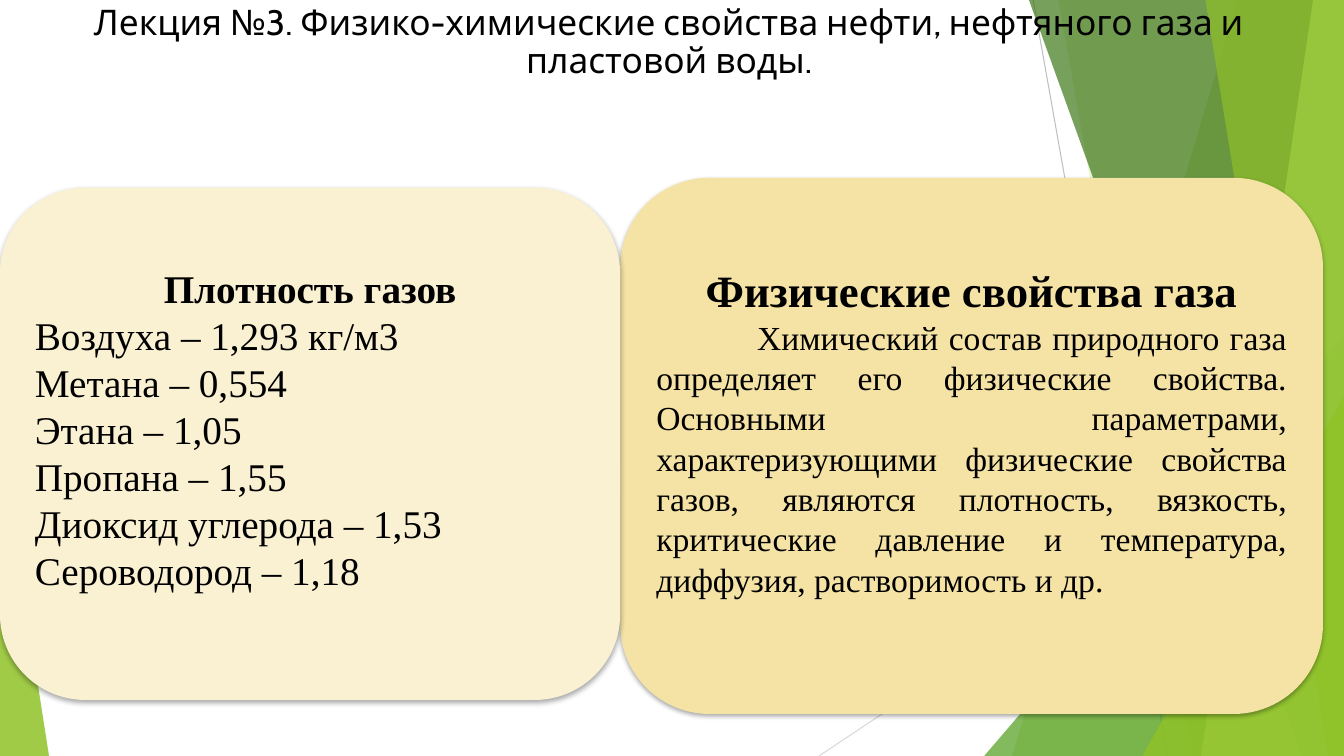
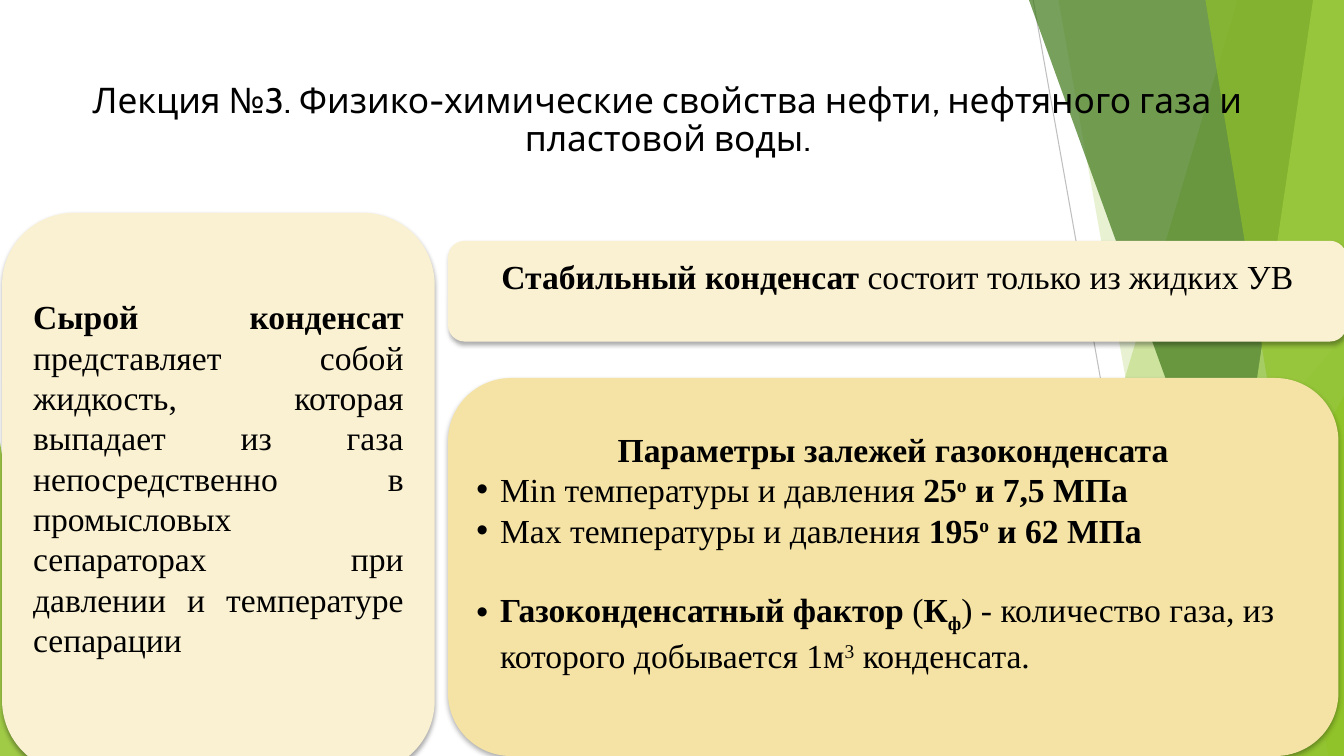
from lxml import etree
from pptx import Presentation
from pptx.dml.color import RGBColor
from pptx.enum.shapes import MSO_CONNECTOR, MSO_SHAPE
from pptx.enum.text import MSO_ANCHOR, MSO_AUTO_SIZE, PP_ALIGN
from pptx.oxml.ns import qn
from pptx.util import Pt

LINE, TRI, ROUND = (MSO_CONNECTOR.STRAIGHT, MSO_SHAPE.ISOSCELES_TRIANGLE,
                    MSO_SHAPE.ROUNDED_RECTANGLE)
TOP, MID = MSO_ANCHOR.TOP, MSO_ANCHOR.MIDDLE
LEFT, MIDDLE, FULL = PP_ALIGN.LEFT, PP_ALIGN.CENTER, PP_ALIGN.JUSTIFY

WIDE, HIGH = 960, 540
HEAD, BODY = "Cabin", "Times New Roman"
BLACK, CREAM, SAND = "000000", "FAF1D2", "F5E3A5"
LIME, GREEN, DARK, PALE = "90C226", "54A021", "3F7819", "C0E474"
TITLE = ("Лекция №3. Физико-химические свойства нефти, "
         "нефтяного газа и пластовой воды.")

# Edges: (start, end, colour)
RAYS = [((738, 0), (834, HIGH), "BFBFBF"), ((WIDE, 290), (585, HIGH), "D9D9D9")]
# Bands up to the right edge: (top x, bottom x, colour, opacity)
BACK = [(884, 723, LIME, 30), (756, 852, LIME, 20)]
FRONT = [(735, 930, DARK, 70), (938, 858, PALE, 70), (861, 949, LIME, 65)]
# Corners standing on the bottom edge: (left, top, width, tip, colour, opacity)
LOW = (703, 240, 257, 1, GREEN, 72)
ENDS = [(816, 283, 144, 1, LIME, 80), (0, 316, 35, 0, LIME, 85)]


def hue(code):
    return RGBColor.from_string(code)


def sub(node, tag, **attrs):
    return etree.SubElement(node, qn(tag), attrs)


def paint(shape, code, alpha=100):
    shape.shadow.inherit = False
    shape.fill.solid()
    shape.fill.fore_color.rgb = hue(code)
    shape.line.fill.background()
    if alpha < 100:
        tint = shape.element.spPr.find(qn("a:solidFill"))[0]
        sub(tint, "a:alpha", val=str(alpha * 1000))


def write(para, text, font=BODY, size=24, bold=False, shift=0, code=BLACK):
    run = para.add_run()
    run.text = text
    run.font.name, run.font.size, run.font.bold = font, Pt(size), bold
    run.font.color.rgb = hue(code)
    if shift:
        run.font._element.set("baseline", str(shift * 1000))


# Shared backdrop, kept in the layout
def backdrop(slide, layout):
    group = slide.shapes.add_group_shape()
    parts = group.shapes

    def band(top, low, code, alpha):
        form = parts.build_freeform(Pt(top), 0)
        form.add_line_segments([(Pt(WIDE), 0), (Pt(WIDE), Pt(HIGH)),
                                (Pt(low), Pt(HIGH))], close=True)
        paint(form.convert_to_shape(), code, alpha)

    def corner(left, top, width, tip, code, alpha):
        shape = parts.add_shape(TRI, Pt(left), Pt(top), Pt(width), Pt(HIGH - top))
        shape.adjustments[0] = tip
        paint(shape, code, alpha)

    for start, end, code in RAYS:
        ray = parts.add_connector(LINE, *map(Pt, start + end))
        ray.line.color.rgb = hue(code)
        ray.line.width = Pt(0.75)
        sub(ray.element.spPr, "a:effectLst")
    for item in BACK:
        band(*item)
    corner(*LOW)
    for item in FRONT:
        band(*item)
    for item in ENDS:
        corner(*item)
    for num, node in enumerate(group.element.iter(qn("p:cNvPr")), 100):
        node.set("id", str(num))
    layout.shapes.element.append(group.element)


def heading(slide, left, top):
    title = slide.shapes.title
    title.left, title.top, title.width, title.height = map(Pt, (left, top, 850, 66))
    frame = title.text_frame
    frame.word_wrap, frame.auto_size = True, MSO_AUTO_SIZE.NONE
    frame.vertical_anchor = TOP
    para = frame.paragraphs[0]
    para.alignment, para.line_spacing = MIDDLE, 0.9
    write(para, TITLE, font=HEAD, size=25.2)


# Rounded card; each row is (alignment, runs, paragraph options)
def card(slide, box, code, rows):
    shape = slide.shapes.add_shape(ROUND, *map(Pt, box))
    paint(shape, code)
    glow = sub(shape.element.spPr.find(qn("a:effectLst")), "a:outerShdw",
               blurRad=str(Pt(3.5)), dist=str(Pt(2.2)), dir="5400000",
               algn="ctr", rotWithShape="0")
    sub(sub(glow, "a:srgbClr", val=BLACK), "a:alpha", val="32000")
    frame = shape.text_frame
    frame.word_wrap, frame.vertical_anchor = True, MID
    frame.margin_bottom = Pt(25)
    for num, (align, runs, opts) in enumerate(rows):
        para = frame.add_paragraph() if num else frame.paragraphs[0]
        para.alignment = align
        para.space_before = Pt(opts.get("gap", 0))
        props = para._p.get_or_add_pPr()
        props.set("indent", str(Pt(opts.get("indent", 0))))
        if opts.get("dot"):
            props.set("marL", str(Pt(17)))
            props.set("indent", str(Pt(-17)))
            sub(props, "a:buFont", typeface="Arial")
            sub(props, "a:buChar", char="•")
        for text, form in runs:
            write(para, text, **form)


def gases(slide):
    heading(slide, 53, 0)
    card(slide, (443, 127, 502, 383), SAND, [
        (MIDDLE, [("Физические свойства газа", {"size": 32, "bold": True})], {}),
        (FULL, [("Химический состав природного газа определяет его физические "
                 "свойства. Основными параметрами, характеризующими физические "
                 "свойства газов, являются плотность, вязкость, критические "
                 "давление и температура, диффузия, растворимость и др.", {})],
         {"indent": 72})])
    rows = ["Воздуха – 1,293 кг/м3", "Метана – 0,554", "Этана – 1,05",
            "Пропана – 1,55", "Диоксид углерода – 1,53", "Сероводород – 1,18"]
    card(slide, (0, 134, 443, 366), CREAM,
         [(MIDDLE, [("Плотность газов", {"size": 28, "bold": True})], {})]
         + [(LEFT, [(row, {"size": 28})], {}) for row in rows])


def fluids(slide):
    bold, dot = {"bold": True}, {"dot": True}
    high = {"bold": True, "shift": 30}
    heading(slide, 52, 55.5)
    card(slide, (1.5, 152, 309, 400), CREAM, [
        (FULL, [("Сырой конденсат ", bold),
                ("представляет собой жидкость, которая выпадает из газа "
                 "непосредственно в промысловых сепараторах при давлении и "
                 "температуре сепарации", {})], {})])
    card(slide, (320, 172, 642, 72), CREAM, [
        (MIDDLE, [("Стабильный конденсат", bold),
                  (" состоит только из жидких УВ", {})], {})])
    limits = [("Min", "25", "7,5"), ("Max", "195", "62")]
    card(slide, (320, 270, 636, 270), SAND, [
        (MIDDLE, [("Параметры залежей газоконденсата", bold)], {}),
        *[(LEFT, [(f"{name} температуры и давления ", {}), (heat, bold),
                  ("о", high), (f" и {force} МПа", bold)], dot)
          for name, heat, force in limits],
        (LEFT, [("Газоконденсатный фактор", bold), (" (", {}), ("К", bold),
                ("ф", {"bold": True, "shift": -25}),
                (") - количество газа, из которого добывается 1м", {}),
                ("3", {"shift": 30}), (" конденсата.", {})],
         {"dot": True, "gap": 28})])


def main():
    prs = Presentation()
    prs.slide_width, prs.slide_height = Pt(WIDE), Pt(HIGH)
    layout = prs.slide_layouts[5]
    first, second = [prs.slides.add_slide(layout) for _ in range(2)]
    backdrop(first, layout)
    gases(first)
    fluids(second)
    prs.save("out.pptx")


if __name__ == "__main__":
    main()
